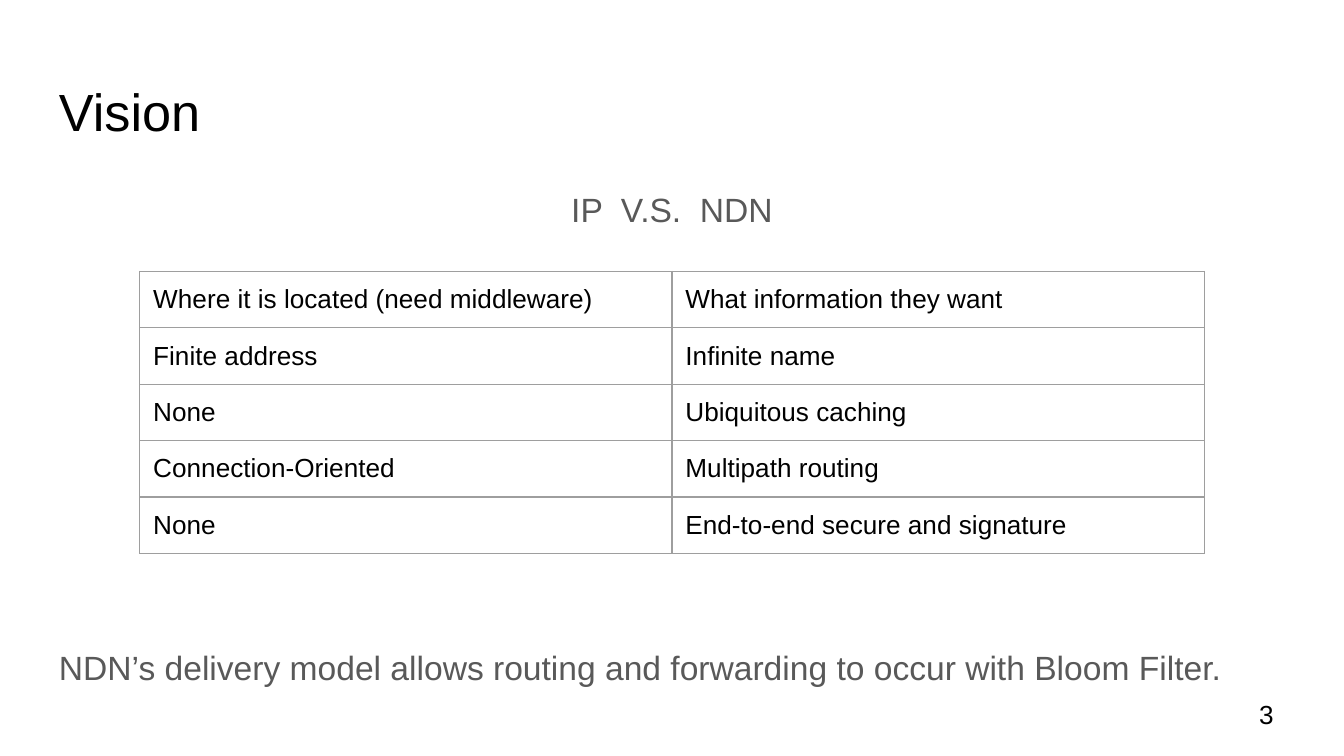
"""Build the Vision slide comparing IP with NDN."""
from lxml import etree
from pptx import Presentation, util as u
from pptx.dml.color import RGBColor
from pptx.enum import text
from pptx.oxml import ns

TITLE = "Vision"
HEADING = "IP  V.S.  NDN"
CLOSING = "NDN’s delivery model allows routing and forwarding to occur with Bloom Filter."
PAGE_NUMBER = "3"
COMPARISON = [
    ("Where it is located (need middleware)", "What information they want"),
    ("Finite address", "Infinite name"),
    ("None", "Ubiquitous caching"),
    ("Connection-Oriented", "Multipath routing"),
    ("None", "End-to-end secure and signature"),
]

WIDTH = 10
HEIGHT = WIDTH * 9 / 16
MARGIN = 0.34
TABLE_LEFT, TABLE_TOP, ROW_HEIGHT = 1.04, 2.02, 0.42
INSET, CELL_BOTTOM = 0.1, 0.08
CLOSING_GAP = 204.5
BLACK = RGBColor(0x00, 0x00, 0x00)
GREY = RGBColor(0x59, 0x59, 0x59)
BORDER = RGBColor(0x9E, 0x9E, 0x9E)


def set_insets(target, bottom=INSET):
    target.margin_left = target.margin_right = target.margin_top = u.Inches(INSET)
    target.margin_bottom = u.Inches(bottom)


def style(para, size, color):
    for span in para.runs:
        span.font.name = "Arial"
        span.font.size = u.Pt(size)
        span.font.color.rgb = color


def add_text(page, area, lines, size, color, anchor=text.MSO_ANCHOR.TOP):
    box = page.shapes.add_textbox(*map(u.Inches, area))
    frame = box.text_frame
    frame.word_wrap = True
    frame.vertical_anchor = anchor
    set_insets(frame)
    frame.text = "\n".join(lines)
    for para in frame.paragraphs:
        style(para, size, color)
    return frame.paragraphs


def add_borders(cell):
    properties = cell._tc.get_or_add_tcPr()
    for side in ("lnL", "lnR", "lnT", "lnB"):
        line = etree.SubElement(properties, ns.qn(f"a:{side}"), w=str(u.Pt(0.75)))
        fill = etree.SubElement(line, ns.qn("a:solidFill"))
        etree.SubElement(fill, ns.qn("a:srgbClr"), val=str(BORDER))


def add_comparison(page):
    rows, columns = len(COMPARISON), len(COMPARISON[0])
    area = (TABLE_LEFT, TABLE_TOP, WIDTH - 2 * TABLE_LEFT, rows * ROW_HEIGHT)
    table = page.shapes.add_table(rows, columns, *map(u.Inches, area)).table
    table.first_row = table.horz_banding = False
    for row, labels in enumerate(COMPARISON):
        for column, label in enumerate(labels):
            cell = table.cell(row, column)
            cell.text = label
            set_insets(cell, CELL_BOTTOM)
            style(cell.text_frame.paragraphs[0], 14, BLACK)
            add_borders(cell)
            cell.fill.background()


def main():
    deck = Presentation()
    deck.slide_width, deck.slide_height = u.Inches(WIDTH), u.Inches(HEIGHT)
    page = deck.slides.add_slide(deck.slide_layouts[6])
    content_width = WIDTH - 2 * MARGIN

    add_text(page, (MARGIN, 0.49, content_width, 0.63), [TITLE], 28, BLACK)
    heading, closing = add_text(
        page, (MARGIN, 1.26, content_width, 3.74), [HEADING, CLOSING], 18, GREY)
    for para in (heading, closing):
        para.line_spacing = 1.15
        para.space_after = u.Pt(16)
    heading.alignment = text.PP_ALIGN.CENTER
    closing.space_before = u.Pt(CLOSING_GAP)
    add_text(page, (9.27, 5.1, 0.6, 0.43), [PAGE_NUMBER], 14, BLACK, text.MSO_ANCHOR.MIDDLE)
    add_comparison(page)
    deck.save("out.pptx")


if __name__ == "__main__":
    main()
